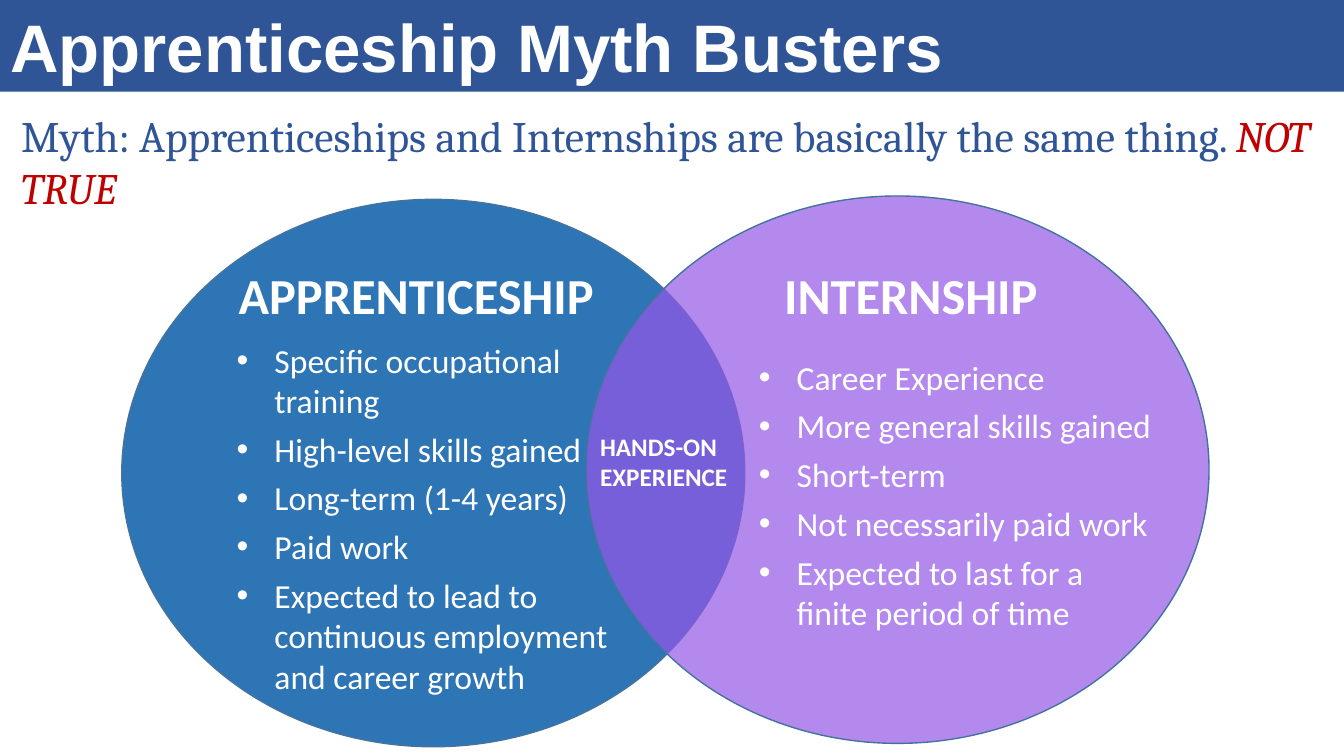
import dataclasses

import pptx
import pptx.dml.color
import pptx.enum.shapes
import pptx.enum.text
import pptx.oxml
import pptx.oxml.ns
import pptx.util

Pt = pptx.util.Pt
RGB = pptx.dml.color.RGBColor.from_string
OVAL = pptx.enum.shapes.MSO_SHAPE.OVAL
ANCHOR = pptx.enum.text.MSO_ANCHOR
GROW = pptx.enum.text.MSO_AUTO_SIZE.SHAPE_TO_FIT_TEXT
LEFT = pptx.enum.text.PP_ALIGN.LEFT


@dataclasses.dataclass(frozen=True)
class Theme:
    navy: str = "2F5597"
    blue: str = "2E75B6"
    violet: str = "9557E7"
    outline: str = "43739E"
    red: str = "C00000"
    white: str = "FFFFFF"
    title: int = 48
    heading: int = 36
    myth: int = 31
    body: int = 24
    overlap: int = 18


theme = Theme()


def write(shape, text, *, size, color=theme.white, font="Calibri", bold=False,
          italic=False, bullet=False, same_line=False):
    """Add text as a new paragraph, or to the last one if same_line is set."""
    frame = shape.text_frame
    para = frame.paragraphs[-1]
    if para.runs and not same_line:
        para = frame.add_paragraph()
    para.alignment = LEFT
    span = para.add_run()
    span.text = text
    span.font.name = font
    span.font.size = Pt(size)
    span.font.bold = bold
    span.font.italic = italic
    span.font.color.rgb = RGB(color)
    if bullet:
        para.space_after = Pt(6)
        properties = para._p.get_or_add_pPr()
        properties.set("marL", str(Pt(27)))
        properties.set("indent", str(-Pt(27)))
        namespace = pptx.oxml.ns.nsdecls("a")
        for xml in (f'<a:buFont {namespace} typeface="Arial"/>',
                    f'<a:buChar {namespace} char="•"/>'):
            properties.append(pptx.oxml.parse_xml(xml))


def add_text_box(left, top, width, height):
    box = page.shapes.add_textbox(Pt(left), Pt(top), Pt(width), Pt(height))
    box.text_frame.word_wrap = True
    box.text_frame.auto_size = GROW
    return box


deck = pptx.Presentation()
deck.slide_width, deck.slide_height = Pt(960), Pt(540)
page = deck.slides.add_slide(deck.slide_layouts[5])

# Title band
title = page.shapes.title
title.left, title.top, title.width, title.height = Pt(0), Pt(0), Pt(960), Pt(65.4)
title.fill.solid()
title.fill.fore_color.rgb = RGB(theme.navy)
title.text_frame.auto_size = GROW
title.text_frame.vertical_anchor = ANCHOR.MIDDLE
write(title, "Apprenticeship Myth Busters", size=theme.title, font="Arial", bold=True)

# Venn circles; the right one lets the left one show through
for left, top, color, opacity in ((87, 142.4, theme.blue, 100),
                                  (418.6, 140, theme.violet, 70)):
    circle = page.shapes.add_shape(OVAL, Pt(left), Pt(top), Pt(445), Pt(391))
    circle.shadow.inherit = False
    circle.fill.solid()
    circle.fill.fore_color.rgb = RGB(color)
    circle.line.color.rgb = RGB(theme.outline)
    circle.line.width = Pt(1)
    if opacity < 100:
        fill_color = circle._element.spPr.find(".//" + pptx.oxml.ns.qn("a:srgbClr"))
        fill_color.append(pptx.oxml.parse_xml(
            f'<a:alpha {pptx.oxml.ns.nsdecls("a")} val="{opacity * 1000}"/>'))

# Headings and bullet lists
sides = (
    ("APPRENTICESHIP", 163.4, (162, 239, 296, 264), (
        "Specific occupational training",
        "High-level skills gained",
        "Long-term (1-4 years)",
        "Paid work",
        "Expected to lead to continuous employment and career growth")),
    ("INTERNSHIP", 553, (535, 251.2, 296, 206), (
        "Career Experience",
        "More general skills gained",
        "Short-term",
        "Not necessarily paid work",
        "Expected to last for a finite period of time")),
)
for heading, heading_left, list_area, points in sides:
    write(add_text_box(heading_left, 185, 294.5, 51), heading,
          size=theme.heading, bold=True)
    point_list = add_text_box(*list_area)
    for point in points:
        write(point_list, point, size=theme.body, bullet=True)

write(add_text_box(421.6, 304.6, 111, 51), "HANDS-ON EXPERIENCE",
      size=theme.overlap, bold=True)

# Myth and verdict
myth = add_text_box(8, 74.2, 938, 85)
write(myth, "Myth: Apprenticeships and Internships are basically the same thing. ",
      size=theme.myth, color=theme.navy, font="Cambria")
write(myth, "NOT TRUE", size=theme.myth, color=theme.red, font="Cambria",
      italic=True, same_line=True)

deck.save("out.pptx")
